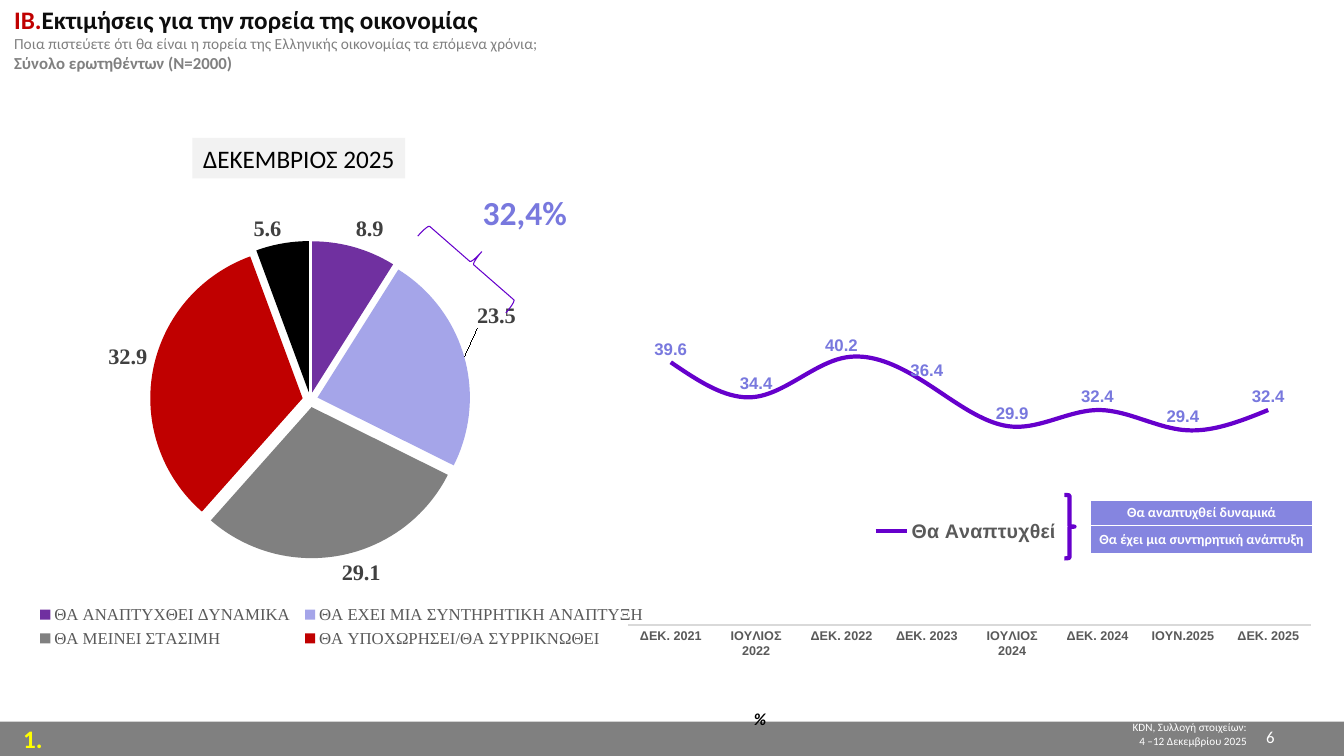
from typing import NamedTuple, Optional

import pptx
import pptx.chart.data
import pptx.dml.color
import pptx.enum.chart
import pptx.enum.shapes
import pptx.enum.text
import pptx.oxml
import pptx.oxml.ns
import pptx.util

Pt = pptx.util.Pt
RGB = pptx.dml.color.RGBColor
Align = pptx.enum.text.PP_ALIGN
Legend = pptx.enum.chart.XL_LEGEND_POSITION
LabelPlace = pptx.enum.chart.XL_LABEL_POSITION
ChartType = pptx.enum.chart.XL_CHART_TYPE
Shape = pptx.enum.shapes.MSO_SHAPE

WHITE, BLACK = RGB(255, 255, 255), RGB(0, 0, 0)
INK, DARK, MUTED = RGB(0x0D, 0x0D, 0x0D), RGB(0x40, 0x40, 0x40), RGB(0x59, 0x59, 0x59)
GREY, RULE, PALE = RGB(0x80, 0x80, 0x80), RGB(0xD9, 0xD9, 0xD9), RGB(0xF2, 0xF2, 0xF2)
RED, YELLOW = RGB(0xC0, 0, 0), RGB(0xFF, 0xFF, 0)
PURPLE, VIOLET = RGB(0x70, 0x30, 0xA0), RGB(0x66, 0, 0xCC)
LILAC, PERIWINKLE, TILE = RGB(0xA5, 0xA5, 0xE9), RGB(0x78, 0x78, 0xDE), RGB(0x85, 0x85, 0xE0)
SERIF, SANS, BODY = "Times New Roman", "Arial", "Calibri"


class Box(NamedTuple):
    left: float
    top: float
    width: float
    height: float

    def points(self) -> list:
        return [Pt(length) for length in self]


class Run(NamedTuple):
    text: str
    size: float
    color: RGB
    bold: bool = False
    italic: bool = False


class Note(NamedTuple):
    box: Box
    lines: list
    align: Align = Align.LEFT
    wrap: bool = True


class Brace(NamedTuple):
    box: Box
    weight: float
    rotation: float = 0


class Frame(NamedTuple):
    """Place inside a chart, as shares of its size."""
    x: float
    y: float
    w: Optional[float] = None
    h: Optional[float] = None


NOTES = [
    Note(Box(689.8, 511.2, 208, 26.6),
         [[Run("KDN, Συλλογή στοιχείων:", 8, WHITE)], [Run("4 –12 Δεκεμβρίου 2025", 8, WHITE)]],
         Align.RIGHT),
    Note(Box(9.4, 513.4, 48, 26.6), [[Run("1.", 18, YELLOW, True)]]),
    Note(Box(767.5, 515.5, 150, 24), [[Run("6", 12, WHITE)]], Align.RIGHT),
    Note(Box(531.4, 502.6, 23, 21.6), [[Run("%", 12, BLACK, True, True)]], wrap=False),
    Note(Box(337.7, 133.2, 75, 36), [[Run("32,4%", 24, PERIWINKLE, True)]], wrap=False),
]
HEADING = [
    [Run("IΒ.", 18, RED, True), Run("Εκτιμήσεις για την πορεία της οικονομίας", 18, INK, True)],
    [Run("Ποια πιστεύετε ότι θα είναι η πορεία της Ελληνικής οικονομίας τα επόμενα χρόνια;", 11, GREY)],
    [Run("Σύνολο ερωτηθέντων (Ν=2000)", 12, GREY, True)],
]
BRACES = [Brace(Box(326.2, 146.2, 21.6, 83.5), 0.75, 311.1),
          Brace(Box(760.3, 353.5, 7.2, 45.4), 3)]
OPINIONS = [
    ("ΘΑ ΑΝΑΠΤΥΧΘΕΙ ΔΥΝΑΜΙΚΑ", 8.9, PURPLE),
    ("ΘΑ ΕΧΕΙ ΜΙΑ ΣΥΝΤΗΡΗΤΙΚΗ ΑΝΑΠΤΥΞΗ", 23.5, LILAC),
    ("ΘΑ ΜΕΙΝΕΙ ΣΤΑΣΙΜΗ", 29.1, GREY),
    ("ΘΑ ΥΠΟΧΩΡΗΣΕΙ/ΘΑ ΣΥΡΡΙΚΝΩΘΕΙ", 32.9, RED),
    ("ΔΞ/ΔΑ", 5.6, BLACK),
]
GROWTH = [("ΔΕΚ. 2021", 39.6), ("ΙΟΥΛΙΟΣ 2022", 34.4), ("ΔΕΚ. 2022", 40.2), ("ΔΕΚ. 2023", 36.4),
          ("ΙΟΥΛΙΟΣ 2024", 29.9), ("ΔΕΚ. 2024", 32.4), ("ΙΟΥΝ.2025", 29.4), ("ΔΕΚ. 2025", 32.4)]
GROWTH_PARTS = [("Θα αναπτυχθεί δυναμικά", 18), ("Θα έχει μια συντηρητική ανάπτυξη", 20.2)]


def xml(tag: str, content: str = "", attributes: str = ""):
    prefix = tag.split(":")[0]
    return pptx.oxml.parse_xml(
        f"<{tag} {pptx.oxml.ns.nsdecls(*{prefix, 'a'})} {attributes}>{content}</{tag}>")


def style(font, size: float, color: RGB, name: str, bold: bool = False) -> None:
    font.size, font.name, font.bold = Pt(size), name, bold
    font.color.rgb = color


def write(text_frame, lines: list, align: Align = Align.LEFT) -> None:
    for number, runs in enumerate(lines):
        paragraph = text_frame.add_paragraph() if number else text_frame.paragraphs[0]
        paragraph.alignment = align
        paragraph.space_before = Pt(0)
        for part in runs:
            run = paragraph.add_run()
            run.text = part.text
            style(run.font, part.size, part.color, BODY, part.bold)
            run.font.italic = part.italic


def add_note(slide, note: Note) -> None:
    text_frame = slide.shapes.add_textbox(*note.box.points()).text_frame
    text_frame.word_wrap = note.wrap
    write(text_frame, note.lines, note.align)


def add_band(slide, box: Box, color: RGB):
    band = slide.shapes.add_shape(Shape.RECTANGLE, *box.points())
    band.shadow.inherit = False
    band.fill.solid()
    band.fill.fore_color.rgb = color
    band.line.fill.background()
    return band


def add_brace(slide, brace: Brace) -> None:
    outline = slide.shapes.add_shape(Shape.RIGHT_BRACE, *brace.box.points())
    outline.shadow.inherit = False
    outline.fill.background()
    outline.line.color.rgb = VIOLET
    outline.line.width = Pt(brace.weight)
    outline.rotation = brace.rotation


def set_layout(parent, position: int, frame: Frame, modes: str = "") -> None:
    """Put a manual layout at the given child position, replacing any other."""
    for old in parent.findall(pptx.oxml.ns.qn("c:layout")):
        parent.remove(old)
    sizes = "".join(f'<c:{key} val="{share}"/>' for key, share in frame._asdict().items()
                    if share is not None)
    parent.insert(position, xml("c:layout", f"<c:manualLayout>{modes}{sizes}</c:manualLayout>"))


def add_chart(slide, kind: ChartType, box: Box, name: str, rows: list, plot: Frame,
              legend_place: Legend, legend: Frame):
    """Add a one-series chart on a clear background with a placed plot and legend."""
    data = pptx.chart.data.CategoryChartData()
    data.categories = [row[0] for row in rows]
    data.add_series(name, [row[1] for row in rows])
    chart = slide.shapes.add_chart(kind, *box.points(), data).chart
    chart.has_title = False
    style(chart.font, 10, BLACK, SERIF)
    chart.has_legend = True
    chart.legend.position = legend_place
    chart.legend.include_in_layout = False
    edges = '<c:xMode val="edge"/><c:yMode val="edge"/>'
    set_layout(chart.element.xpath(".//c:plotArea")[0], 0, plot,
               '<c:layoutTarget val="inner"/>' + edges)
    set_layout(chart.element.xpath(".//c:legend")[0], 1, legend, edges)
    chart.element.xpath("c:chart")[0].addnext(
        xml("c:spPr", "<a:noFill/><a:ln><a:noFill/></a:ln>"))
    return chart


def show_values(labels, place: LabelPlace, size: float, color: RGB, font: str) -> None:
    labels.show_value = True
    labels.position = place
    style(labels.font, size, color, font, True)


def add_opinion_pie(slide) -> None:
    chart = add_chart(slide, ChartType.PIE, Box(-41.8, 151.9, 510.5, 321.1), "Series 1", OPINIONS,
                      Frame(0.292, 0.055, 0.448, 0.712), Legend.RIGHT,
                      Frame(0.125, 0.86, 0.87, 0.12))
    style(chart.legend.font, 12, MUTED, SERIF)
    chart.element.xpath(".//c:legend/c:legendPos")[0].addnext(
        xml("c:legendEntry", '<c:idx val="4"/><c:delete val="1"/>'))
    chart.plots[0].vary_by_categories = True
    series = chart.plots[0].series[0]
    for number, (_, _, color) in enumerate(OPINIONS):
        fill = series.points[number].format.fill
        fill.solid()
        fill.fore_color.rgb = color
    chart.element.xpath(".//c:dPt")[0].addprevious(xml("c:explosion", attributes='val="5"'))
    show_values(series.data_labels, LabelPlace.OUTSIDE_END, 16, DARK, SERIF)
    moved = series.points[1].data_label
    moved.position = LabelPlace.OUTSIDE_END
    style(moved.font, 16, DARK, SERIF, True)
    set_layout(chart.element.xpath(".//c:dLbl")[0], 1, Frame(0.01, -0.06))


def add_growth_line(slide) -> None:
    chart = add_chart(slide, ChartType.LINE, Box(445.7, 151.9, 493.2, 339.8), "Θα Αναπτυχθεί",
                      GROWTH, Frame(0.006, 0.03, 0.989, 0.837), Legend.BOTTOM,
                      Frame(0.35, 0.63, 0.29, 0.08))
    style(chart.legend.font, 14, MUTED, SANS, True)
    chart.plots[0].vary_by_categories = False
    series = chart.plots[0].series[0]
    series.smooth = True
    series.marker.style = pptx.enum.chart.XL_MARKER_STYLE.NONE
    series.format.line.color.rgb = VIOLET
    series.format.line.width = Pt(3)
    show_values(series.data_labels, LabelPlace.ABOVE, 12, PERIWINKLE, SANS)
    share, period = chart.value_axis, chart.category_axis
    share.minimum_scale, share.maximum_scale = 0, 60
    share.has_major_gridlines = False
    share.visible = False
    period.major_tick_mark = pptx.enum.chart.XL_TICK_MARK.NONE
    style(period.tick_labels.font, 9, MUTED, SANS, True)
    period.format.line.color.rgb = RULE
    period.format.line.width = Pt(0.75)


def add_growth_parts(slide) -> None:
    box = Box(779, 357.1, 158.4, sum(height for _, height in GROWTH_PARTS))
    table = slide.shapes.add_table(len(GROWTH_PARTS), 1, *box.points()).table
    table.first_row = table.horz_banding = False
    for number, (text, height) in enumerate(GROWTH_PARTS):
        table.rows[number].height = Pt(height)
        cell = table.cell(number, 0)
        cell.margin_left = cell.margin_right = cell.margin_top = Pt(0.7)
        cell.margin_bottom = Pt(0)
        cell.vertical_anchor = pptx.enum.text.MSO_ANCHOR.MIDDLE
        write(cell.text_frame, [[Run(text, 10, WHITE, True)]], Align.CENTER)
        cell.fill.solid()
        cell.fill.fore_color.rgb = TILE
        properties = cell._tc.get_or_add_tcPr()
        for position, side in enumerate(("a:lnR", "a:lnT", "a:lnB")):
            properties.insert(position, xml(
                side, f'<a:solidFill><a:srgbClr val="{WHITE}"/></a:solidFill>', 'w="6350"'))


def main() -> None:
    deck = pptx.Presentation()
    deck.slide_width, deck.slide_height = Pt(960), Pt(540)
    slide = deck.slides.add_slide(deck.slide_layouts[5])
    title = slide.shapes.title
    title.left, title.top, title.width, title.height = Box(2.9, 3.6, 839.5, 90).points()
    title.text_frame.auto_size = pptx.enum.text.MSO_AUTO_SIZE.NONE
    title.text_frame.vertical_anchor = pptx.enum.text.MSO_ANCHOR.TOP
    write(title.text_frame, HEADING)
    title.text_frame.paragraphs[0].line_spacing = 0.8
    add_band(slide, Box(0, 515.5, 960, 24.5), GREY)
    for note in NOTES:
        add_note(slide, note)
    month = add_band(slide, Box(137.5, 98.6, 152, 28.8), PALE)
    write(month.text_frame, [[Run("ΔΕΚΕΜΒΡΙΟΣ 2025", 18, BLACK)]], Align.CENTER)
    add_opinion_pie(slide)
    add_growth_line(slide)
    add_growth_parts(slide)
    for brace in BRACES:
        add_brace(slide, brace)
    deck.save("out.pptx")


if __name__ == "__main__":
    main()
